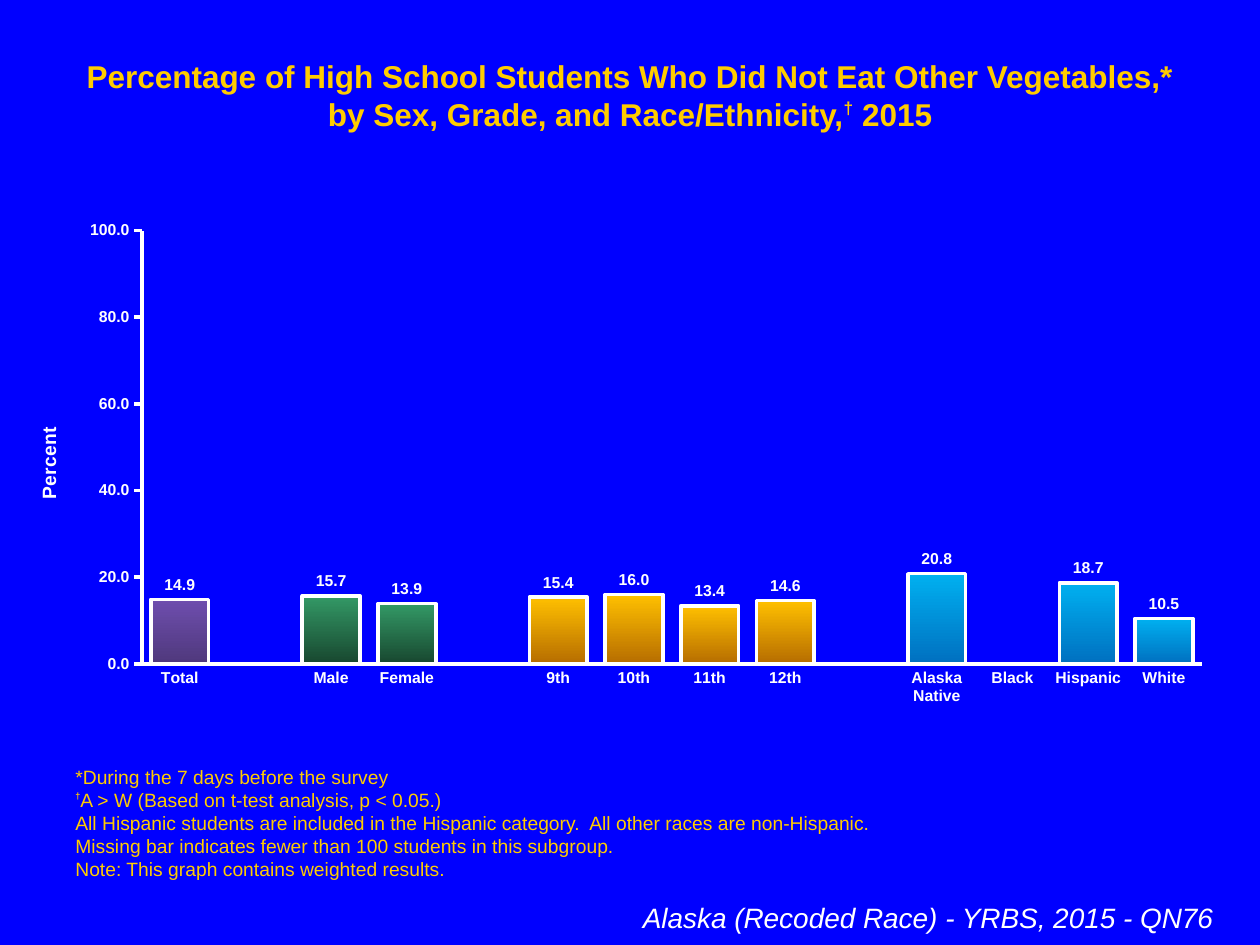
from lxml.etree import SubElement
from pptx import Presentation
from pptx.chart.data import CategoryChartData
from pptx.dml.color import RGBColor
from pptx.enum.chart import XL_CHART_TYPE, XL_LABEL_POSITION, XL_TICK_MARK
from pptx.enum.text import MSO_ANCHOR, PP_ALIGN
from pptx.oxml.ns import qn
from pptx.util import Inches, Pt

BLUE = RGBColor(0x00, 0x00, 0xFF)
GOLD = RGBColor(0xFF, 0xCC, 0x00)
WHITE = RGBColor(0xFF, 0xFF, 0xFF)
TOTAL = (RGBColor(0x6E, 0x4E, 0xAE), RGBColor(0x4F, 0x38, 0x7C))
SEX = (RGBColor(0x33, 0x99, 0x66), RGBColor(0x18, 0x47, 0x2F))
GRADE = (RGBColor(0xFF, 0xC0, 0x00), RGBColor(0xB6, 0x6D, 0x00))
RACE = (RGBColor(0x00, 0xB0, 0xF0), RGBColor(0x00, 0x70, 0xC0))

GROUPS = [
    (TOTAL, [("Total", 14.9)]),
    (SEX, [("Male", 15.7), ("Female", 13.9)]),
    (GRADE, [("9th", 15.4), ("10th", 16.0), ("11th", 13.4), ("12th", 14.6)]),
    (RACE, [("Alaska Native", 20.8), ("Black", None), ("Hispanic", 18.7), ("White", 10.5)]),
]

TITLE = {"name": "Arial", "size": Pt(18), "bold": True, "color": GOLD}
NOTE = {"name": "Arial", "size": Pt(11), "bold": False, "color": GOLD}
SOURCE = {"name": "Arial", "size": Pt(16), "italic": True, "color": WHITE}
CHART_TEXT = {"name": "Arial", "size": Pt(9), "bold": True, "color": WHITE}

TITLE_RUNS = [
    ("Percentage of High School Students Who Did Not Eat Other Vegetables,* "
     "by Sex, Grade, and Race/Ethnicity,", {}),
    ("†", {"size": Pt(17), "baseline": 40}),
    (" 2015", {}),
]
NOTES = [
    [("*During the 7 days before the survey", {})],
    [("†", {"size": Pt(9), "bold": True, "baseline": 50}),
     ("A > W (Based on t-test analysis, p < 0.05.)", {})],
    [("All Hispanic students are included in the Hispanic category.  "
      "All other races are non-Hispanic.", {})],
    [("Missing bar indicates fewer than 100 students in this subgroup.", {})],
    [("Note: This graph contains weighted results.", {})],
]


def format_font(font, values):
    """Apply a dict of format values to a font."""
    for name, value in values.items():
        if name == "color":
            font.color.rgb = value
        else:
            setattr(font, name, value)


def write_text(shape, place, paragraphs, style, alignment, anchor=MSO_ANCHOR.TOP):
    """Place a shape and fill it with paragraphs of styled runs."""
    for name, value in zip(("left", "top", "width", "height"), place):
        setattr(shape, name, Inches(value))
    frame = shape.text_frame
    frame.word_wrap = True
    frame.vertical_anchor = anchor
    for index, runs in enumerate(paragraphs):
        paragraph = frame.add_paragraph() if index else frame.paragraphs[0]
        paragraph.alignment = alignment
        paragraph.line_spacing = 1.0
        paragraph.space_before = Pt(0)
        for text, changes in runs:
            values = {**style, **changes}
            baseline = values.pop("baseline", 0)
            run = paragraph.add_run()
            run.text = text
            format_font(run.font, values)
            if baseline:
                run.font._element.set("baseline", str(baseline * 1000))


def add_text_box(slide, *details):
    """Add a text box and write its text."""
    box = slide.shapes.add_textbox(0, 0, Inches(1), Inches(1))
    write_text(box, *details)


def set_plot_layout(chart, **fractions):
    """Fix the inner plot area as fractions of the chart."""
    plot_area = chart._chartSpace.chart.plotArea
    layout = plot_area.find(qn("c:layout"))
    if layout is None:
        layout = SubElement(plot_area, qn("c:layout"))
        plot_area.insert(0, layout)
    manual = SubElement(layout, qn("c:manualLayout"))
    settings = {"layoutTarget": "inner", "xMode": "edge", "yMode": "edge", **fractions}
    for name, value in settings.items():
        SubElement(manual, qn(f"c:{name}")).set("val", str(value))


def format_axis(axis, tick_mark):
    """Give an axis its line, tick marks and label font."""
    axis.has_major_gridlines = False
    axis.major_tick_mark = tick_mark
    axis.minor_tick_mark = XL_TICK_MARK.NONE
    axis.format.line.color.rgb = WHITE
    axis.format.line.width = Pt(2)
    format_font(axis.tick_labels.font, CHART_TEXT)


def format_value_axis(axis):
    """Set the percent scale and its rotated title."""
    format_axis(axis, XL_TICK_MARK.OUTSIDE)
    scale = {"minimum_scale": 0, "maximum_scale": 100, "major_unit": 20}
    for name, value in scale.items():
        setattr(axis, name, value)
    frame = axis.axis_title.text_frame
    frame._txBody.bodyPr.set("rot", "-5400000")
    frame._txBody.bodyPr.set("vert", "horz")
    run = frame.paragraphs[0].add_run()
    run.text = "Percent"
    format_font(run.font, {**CHART_TEXT, "size": Pt(11)})


def format_bar(bar, colors):
    """Give a bar a downward gradient and a white outline."""
    bar.fill.gradient()
    bar.fill.gradient_angle = 270
    for stop, color in zip(bar.fill.gradient_stops, colors):
        stop.color.rgb = color
    bar.line.color.rgb = WHITE
    bar.line.width = Pt(2)


def add_percent_chart(slide):
    """Add the column chart with a gap between groups."""
    columns = []
    for colors, members in GROUPS:
        if columns:
            columns.append(("", None, None))
        columns += [(label, value, colors) for label, value in members]
    data = CategoryChartData(number_format="#,##0.0")
    data.categories = [label for label, _, _ in columns]
    data.add_series("Series 1", [value for _, value, _ in columns])
    chart = slide.shapes.add_chart(
        XL_CHART_TYPE.COLUMN_CLUSTERED,
        Inches(0.17), Inches(1.67), Inches(9.56), Inches(4), data,
    ).chart
    chart.has_legend = False
    chart.has_title = False
    format_font(chart.font, {**CHART_TEXT, "size": Pt(18), "bold": False})
    set_plot_layout(chart, x=0.1, y=0.04, w=0.88, h=0.86)
    format_axis(chart.category_axis, XL_TICK_MARK.NONE)
    format_value_axis(chart.value_axis)

    plot = chart.plots[0]
    plot.gap_width = 31
    plot.overlap = 100
    plot.vary_by_categories = False
    plot.has_data_labels = True
    labels = plot.data_labels
    label_values = {
        "show_value": True, "number_format": "#,##0.0",
        "number_format_is_linked": False, "position": XL_LABEL_POSITION.OUTSIDE_END,
    }
    for name, value in label_values.items():
        setattr(labels, name, value)
    format_font(labels.font, CHART_TEXT)
    for index, (_, value, colors) in enumerate(columns):
        if value is not None:
            format_bar(plot.series[0].points[index].format, colors)


def main():
    """Build the slide and save it."""
    presentation = Presentation()
    presentation.slide_width = Inches(10)
    presentation.slide_height = Inches(7.5)
    slide = presentation.slides.add_slide(presentation.slide_layouts[5])
    slide.background.fill.solid()
    slide.background.fill.fore_color.rgb = BLUE
    write_text(slide.shapes.title, (0.5, 0.4, 9, 0.7), [TITLE_RUNS], TITLE, PP_ALIGN.CENTER)
    add_text_box(slide, (0.5, 6.04, 9, 1), NOTES, NOTE, PP_ALIGN.LEFT, MSO_ANCHOR.BOTTOM)
    add_text_box(slide, (0.33, 7.1, 9.4, 0.37),
                 [[("Alaska (Recoded Race) - YRBS, 2015 - QN76", {})]], SOURCE, PP_ALIGN.RIGHT)
    add_percent_chart(slide)
    presentation.save("out.pptx")


if __name__ == "__main__":
    main()
